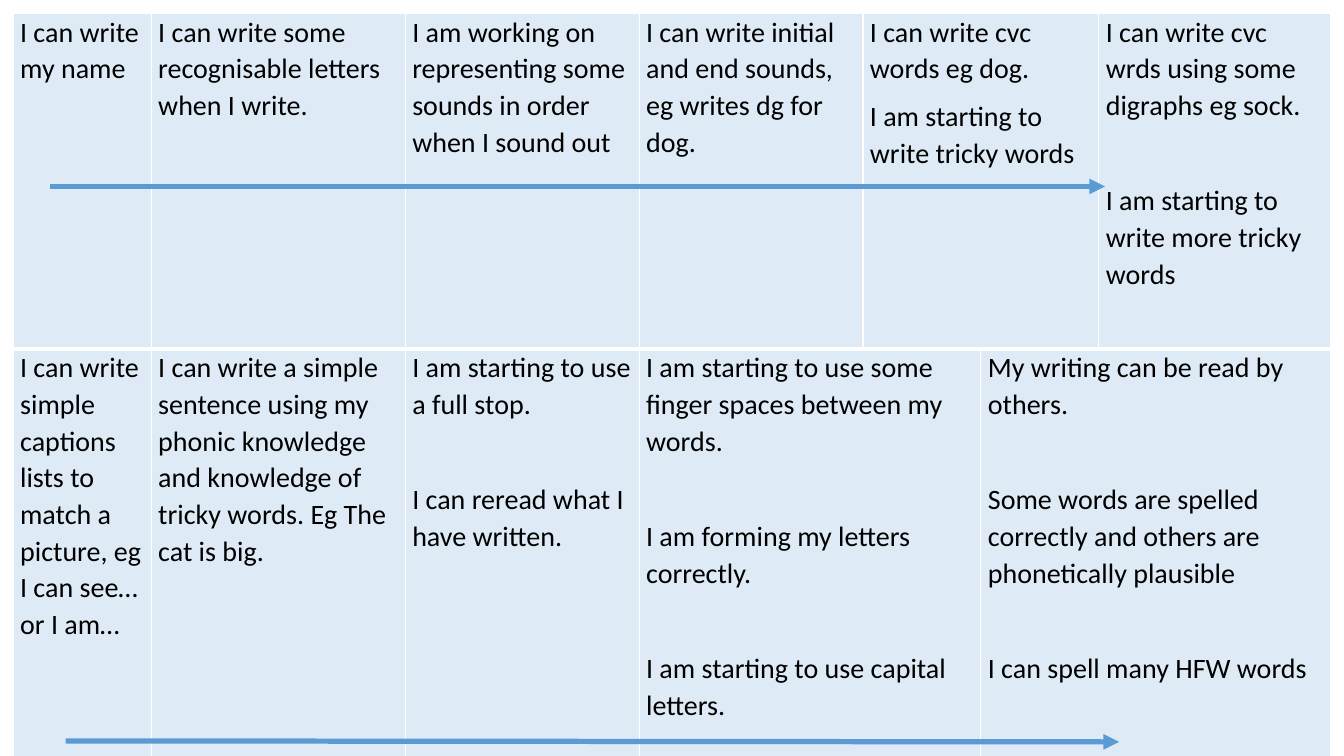
from lxml.etree import SubElement
from pptx import Presentation
from pptx.dml.color import RGBColor
from pptx.enum.shapes import MSO_CONNECTOR
from pptx.oxml.ns import qn
from pptx.util import Inches, Pt

COLORS = {"cell": "DEEBF7", "border": "FFFFFF", "text": "000000", "arrow": "5B9BD5"}
FONT = "Calibri"
TABLE_LEFT, TABLE_TOP = 0.13, 0.13
COLUMN_WIDTHS = [1.37, 2.52, 2.32, 2.22, 1.17, 1.17, 2.3]
ROW_HEIGHTS = [3.33, 4.12]
BORDER_WIDTHS = [{"L": 1, "R": 1, "T": 1, "B": 3}, {"L": 1, "R": 1, "T": 3, "B": 1}]
PARAGRAPH_GAP = 8
WIDE_GAP = 34

# Each entry: columns spanned, gap in points before later statements, statements
STAGES = [
    [
        (1, 0, ["I can write my name"]),
        (1, 0, ["I can write some recognisable letters when I write."]),
        (1, 0, ["I am working on representing some sounds in order when I sound out"]),
        (1, 0, ["I can write initial and end sounds, eg writes dg for dog."]),
        (2, 0, ["I can write cvc words eg dog.", "I am starting to write tricky words"]),
        (1, WIDE_GAP, ["I can write cvc wrds using some digraphs eg sock.",
                       "I am starting to write more tricky words"]),
    ],
    [
        (1, 0, ["I can write simple captions lists to match a picture, eg I can see… or I am…"]),
        (1, 0, ["I can write a simple sentence using my phonic knowledge and knowledge of "
                "tricky words. Eg The cat is big."]),
        (1, WIDE_GAP, ["I am starting to use a full stop.", "I can reread what I have written."]),
        (2, WIDE_GAP, ["I am starting to use some finger spaces between my words.",
                       "I am forming my letters correctly.",
                       "I am starting to use capital letters."]),
        (2, WIDE_GAP, ["My writing can be read by others.",
                       "Some words are spelled correctly and others are phonetically plausible",
                       "I can spell many HFW words"]),
    ],
]
ARROWS = [(0.5, 1.85, 10.96, 1.85), (0.65, 7.35, 11.1, 7.36)]


def style_cell(cell, borders):
    properties = cell._tc.get_or_add_tcPr()
    for side, width in borders.items():
        line = SubElement(properties, qn(f"a:ln{side}"), w=str(Pt(width)))
        fill = SubElement(line, qn("a:solidFill"))
        SubElement(fill, qn("a:srgbClr"), val=COLORS["border"])
    cell.fill.solid()
    cell.fill.fore_color.rgb = RGBColor.from_string(COLORS["cell"])
    cell.margin_left = cell.margin_right = Inches(0.07)
    cell.margin_top = cell.margin_bottom = 0


def write_statements(cell, statements, gap):
    cell.text_frame.text = "\n".join(statements)
    for index, para in enumerate(cell.text_frame.paragraphs):
        para.line_spacing = 1.07
        para.space_before = Pt(gap if index else 0)
        para.space_after = Pt(PARAGRAPH_GAP)
        for span in para.runs:
            span.font.name = FONT
            span.font.size = Pt(20)
            span.font.color.rgb = RGBColor.from_string(COLORS["text"])


def add_stage_table(page):
    table = page.shapes.add_table(
        len(ROW_HEIGHTS), len(COLUMN_WIDTHS), Inches(TABLE_LEFT), Inches(TABLE_TOP),
        Inches(sum(COLUMN_WIDTHS)), Inches(sum(ROW_HEIGHTS))).table
    table.first_row = table.horz_banding = False
    for column, width in zip(table.columns, COLUMN_WIDTHS):
        column.width = Inches(width)
    for row_index, stage in enumerate(STAGES):
        table.rows[row_index].height = Inches(ROW_HEIGHTS[row_index])
        for cell in table.rows[row_index].cells:
            style_cell(cell, BORDER_WIDTHS[row_index])
        column_index = 0
        for columns, gap, statements in stage:
            cell = table.cell(row_index, column_index)
            column_index += columns
            if columns > 1:
                cell.merge(table.cell(row_index, column_index - 1))
            write_statements(cell, statements, gap)


def add_arrow(page, ends):
    arrow = page.shapes.add_connector(MSO_CONNECTOR.STRAIGHT, *map(Inches, ends))
    arrow.line.color.rgb = RGBColor.from_string(COLORS["arrow"])
    arrow.line.width = Pt(3.75)
    SubElement(arrow.line._get_or_add_ln(), qn("a:tailEnd"), type="triangle")
    SubElement(arrow._element.spPr, qn("a:effectLst"))


def main():
    deck = Presentation()
    deck.slide_width, deck.slide_height = Inches(13.33), Inches(7.5)
    page = deck.slides.add_slide(deck.slide_layouts[6])
    add_stage_table(page)
    for ends in ARROWS:
        add_arrow(page, ends)
    deck.save("out.pptx")


if __name__ == "__main__":
    main()
